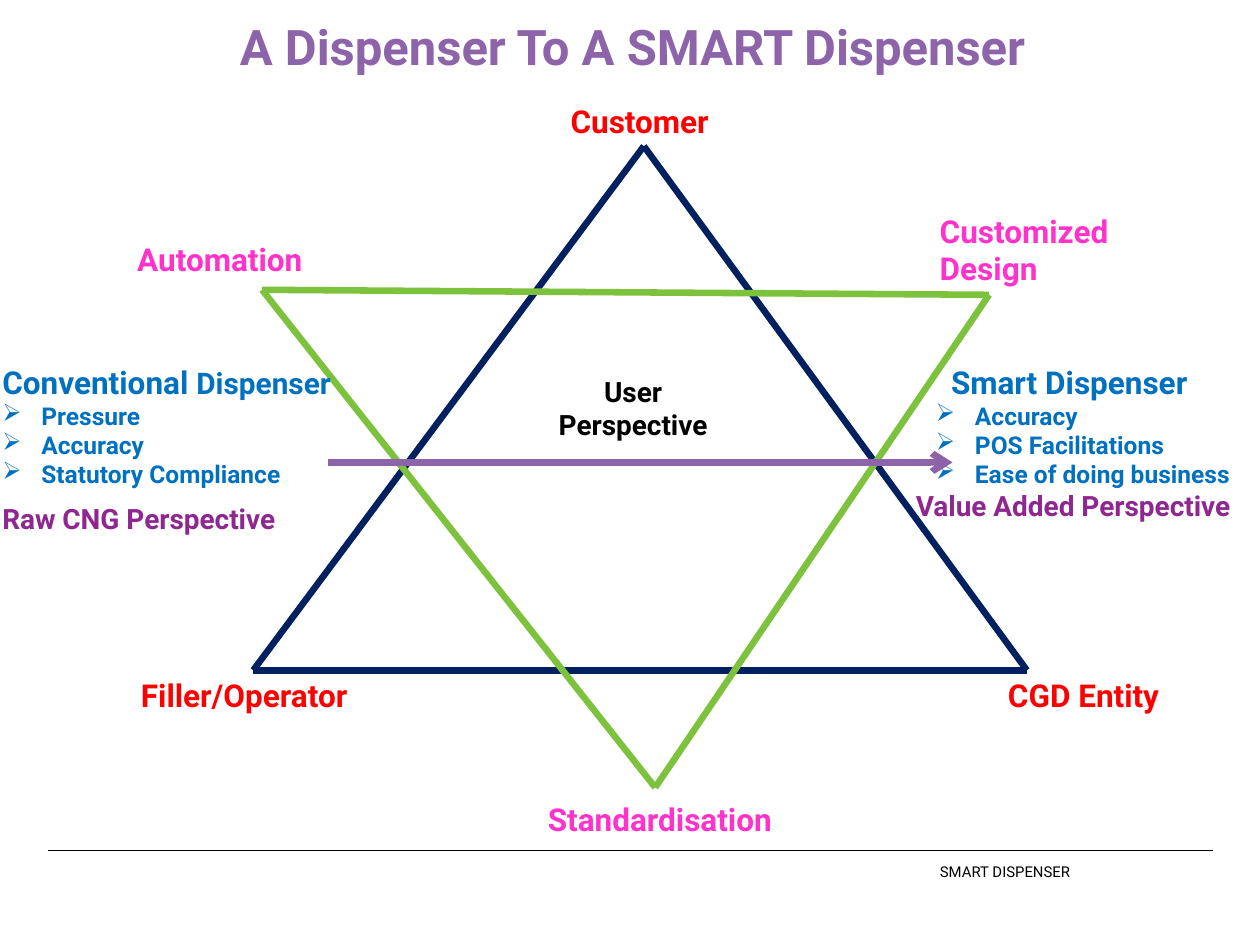
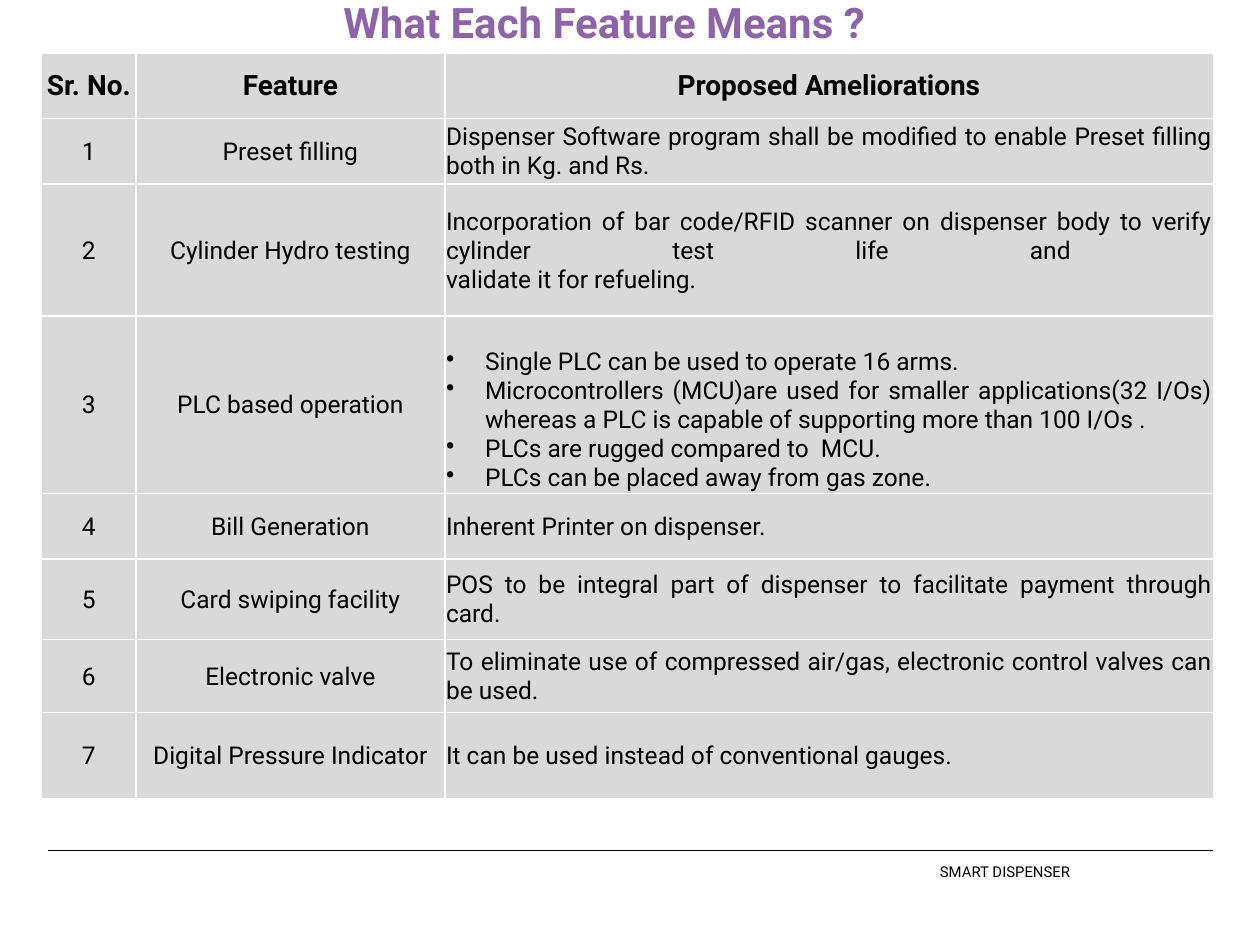
import copy

import pptx
import pptx.dml.color
import pptx.enum.shapes
import pptx.enum.text
import pptx.oxml
import pptx.oxml.ns
import pptx.util
from pptx.util import Inches

RGB = pptx.dml.color.RGBColor
PURPLE = RGB(0x8D, 0x64, 0xAA)
PLUM = RGB(0x8E, 0x27, 0x8F)
PINK = RGB(0xFF, 0x33, 0xCC)
RED = RGB(0xFF, 0x00, 0x00)
BLUE = RGB(0x00, 0x70, 0xC0)
NAVY = RGB(0x00, 0x20, 0x60)
GREEN = RGB(0x7D, 0xC2, 0x3D)
GREY = RGB(0xD9, 0xD9, 0xD9)
BLACK = RGB(0x00, 0x00, 0x00)
FONT = "Roboto"
ALIGN = pptx.enum.text.PP_ALIGN
LEFT, CENTER, JUSTIFY = ALIGN.LEFT, ALIGN.CENTER, ALIGN.JUSTIFY
HANGING = 0.31

# Content: star diagram
STAR_TITLE = "A Dispenser To A SMART Dispenser"
FOOTER = "SMART DISPENSER"
TRIANGLES = [
    (NAVY, [(5.11, 1.16), (2.01, 5.32), (8.15, 5.32)]),
    (GREEN, [(5.2, 6.25), (2.08, 2.3), (7.85, 2.34)]),
]
# lines of text, box, size, colour, alignment
LABELS = [
    (["Automation"], (0.99, 1.86, 1.62, 0.4), 18, PINK, LEFT),
    (["Customized", "Design"], (7.36, 1.63, 1.69, 0.71), 18, PINK, LEFT),
    (["Standardisation"], (4.25, 6.3, 2.12, 0.4), 18, PINK, LEFT),
    (["Customer"], (4.43, 0.76, 1.36, 0.4), 18, RED, LEFT),
    (["CGD Entity"], (7.83, 5.32, 1.54, 0.4), 18, RED, CENTER),
    (["Filler/Operator"], (1.02, 5.32, 1.98, 0.4), 18, RED, LEFT),
    (["User", "Perspective"], (4.29, 2.92, 1.47, 0.91), 16, BLACK, CENTER),
    (["Raw CNG Perspective"], (-0.08, 3.93, 2.54, 0.37), 16, PLUM, LEFT),
    (["Value Added Perspective"], (7.17, 3.83, 2.89, 0.37), 16, PLUM, LEFT),
]
# heading runs, heading indent, points, box, wrap
DISPENSERS = [
    ([("Smart Dispenser", 18)], 0.12,
     ["Accuracy", "POS Facilitations", "Ease of doing business"],
     (7.33, 2.83, 2.67, 1.11), False),
    ([("Conventional ", 18), ("Dispenser", 17)], 0,
     ["Pressure", "Accuracy", "Statutory Compliance"],
     (-0.08, 2.83, 3.08, 1.11), True),
]

# Content: feature table
TABLE_TITLE = "What Each Feature Means ?"
HEADERS = ["Sr. No.", "Feature", "Proposed Ameliorations"]
COLUMN_WIDTHS = [0.75, 2.45, 6.1]
HEADER_HEIGHT = 0.52
# feature, amelioration (a list is bulleted), row height
FEATURES = [
    ("Preset filling",
     "Dispenser Software program shall be modified to enable Preset filling "
     "both in Kg. and Rs.", 0.52),
    ("Cylinder Hydro testing",
     "Incorporation of bar code/RFID scanner on dispenser body to verify "
     "cylinder test life and \nvalidate it for refueling.", 1.05),
    ("PLC based operation",
     ["Single PLC can be used to operate 16 arms.",
      "Microcontrollers (MCU)are used for smaller applications(32 I/Os) "
      "whereas a PLC is capable of supporting more than 100 I/Os .",
      "PLCs are rugged compared to  MCU.",
      "PLCs can be placed away from gas zone."], 1.39),
    ("Bill Generation", "Inherent Printer on dispenser.", 0.52),
    ("Card swiping facility",
     "POS to be integral part of dispenser to facilitate payment through card.", 0.64),
    ("Electronic valve",
     "To eliminate use of compressed air/gas, electronic control valves can "
     "be used.", 0.58),
    ("Digital Pressure Indicator",
     "It can be used instead of conventional gauges.", 0.68),
]


def write(frame, text, size=14, colour=BLACK, bold=False, align=LEFT, bullet=None, indent=0):
    """Add one paragraph; text is a string or a list of (string, size) runs."""
    first = frame.paragraphs[0]
    paragraph = frame.add_paragraph() if first.runs else first
    paragraph.alignment = align
    properties = paragraph._p.get_or_add_pPr()
    if bullet:
        properties.set("marL", str(Inches(HANGING)))
        properties.set("indent", str(-Inches(HANGING)))
        properties.append(pptx.oxml.parse_xml(
            f'<a:buChar {pptx.oxml.ns.nsdecls("a")} char="{bullet}"/>'))
    elif indent:
        properties.set("marL", str(Inches(indent)))
    for words, run_size in [(text, size)] if isinstance(text, str) else text:
        for number, line in enumerate(words.split("\n")):
            if number:
                paragraph.add_line_break()
            run = paragraph.add_run()
            run.text = line
            run.font.name = FONT
            run.font.size = pptx.util.Pt(run_size)
            run.font.bold = bold
            run.font.color.rgb = colour
    for line_break in paragraph._p.findall(pptx.oxml.ns.qn("a:br")):
        line_break.append(copy.deepcopy(run._r.rPr))


def add_box(slide, box, wrap=True, inset=True, grow=True):
    frame = slide.shapes.add_textbox(*map(Inches, box)).text_frame
    frame.word_wrap = wrap
    if grow:
        frame.auto_size = pptx.enum.text.MSO_AUTO_SIZE.SHAPE_TO_FIT_TEXT
    if not inset:
        frame.margin_left = frame.margin_right = frame.margin_top = frame.margin_bottom = 0
    return frame


def add_line(slide, start, end, colour, width, arrow=False):
    line = slide.shapes.add_connector(
        pptx.enum.shapes.MSO_CONNECTOR.STRAIGHT, *map(Inches, (*start, *end)))
    line.line.color.rgb = colour
    line.line.width = pptx.util.Pt(width)
    namespace = pptx.oxml.ns.nsdecls("a")
    if arrow:
        line.line._get_or_add_ln().append(
            pptx.oxml.parse_xml(f'<a:tailEnd {namespace} type="arrow"/>'))
    line._element.spPr.append(pptx.oxml.parse_xml(f"<a:effectLst {namespace}/>"))


def add_slide(deck, title, title_box, title_size, **box_format):
    """Start a slide with the shared title style, rule and footer."""
    slide = deck.slides.add_slide(deck.slide_layouts[6])
    add_line(slide, (0.38, 6.75), (9.63, 6.75), BLACK, 0.25)
    write(add_box(slide, title_box, **box_format), title,
          size=title_size, colour=PURPLE, bold=True, align=CENTER)
    write(add_box(slide, (7.46, 6.85, 1.83, 0.14), inset=False), FOOTER, size=8.5)
    return slide


def fill_cell(cell, paragraphs, **text_format):
    cell.vertical_anchor = pptx.enum.text.MSO_ANCHOR.MIDDLE
    cell.margin_left = cell.margin_right = cell.margin_top = Inches(0.01)
    cell.margin_bottom = 0
    properties = cell._tc.get_or_add_tcPr()
    for side in "LRTB":
        properties.append(pptx.oxml.parse_xml(
            f'<a:ln{side} {pptx.oxml.ns.nsdecls("a")} w="12700"><a:solidFill>'
            f'<a:srgbClr val="FFFFFF"/></a:solidFill></a:ln{side}>'))
    cell.fill.solid()
    cell.fill.fore_color.rgb = GREY
    for paragraph in paragraphs:
        write(cell.text_frame, paragraph, **text_format)


def build_star(deck):
    slide = add_slide(deck, STAR_TITLE, (0.39, 0.13, 9.26, 0.6), 28, inset=False, grow=False)
    # Two overlapping triangles
    for colour, corners in TRIANGLES:
        for start, end in zip(corners, corners[1:] + corners[:1]):
            add_line(slide, start, end, colour, 3.75)
    # Labels at the corners, centre and sides
    for lines, box, size, colour, align in LABELS:
        frame = add_box(slide, box, wrap=False)
        for line in lines:
            write(frame, line, size=size, colour=colour, bold=True, align=align)
    # The two dispensers and the arrow between them
    for heading, indent, points, box, wrap in DISPENSERS:
        frame = add_box(slide, box, wrap=wrap)
        write(frame, heading, colour=BLUE, bold=True, indent=indent)
        for point in points:
            write(frame, point, colour=BLUE, bold=True, bullet="➢")
    add_line(slide, (2.6, 3.67), (7.56, 3.67), PURPLE, 3.75, arrow=True)


def build_features(deck):
    slide = add_slide(deck, TABLE_TITLE, (0.46, -0.08, 8.67, 0.5), 24)
    heights = [HEADER_HEIGHT] + [height for *_, height in FEATURES]
    features = slide.shapes.add_table(
        len(heights), len(HEADERS), Inches(0.33), Inches(0.42),
        Inches(sum(COLUMN_WIDTHS)), Inches(sum(heights))).table
    features.horz_banding = False
    for column, width in zip(features.columns, COLUMN_WIDTHS):
        column.width = Inches(width)
    for row, height in zip(features.rows, heights):
        row.height = Inches(height)
    for column, header in enumerate(HEADERS):
        fill_cell(features.cell(0, column), [header], size=16, bold=True, align=CENTER)
    for number, (feature, amelioration, _) in enumerate(FEATURES, 1):
        fill_cell(features.cell(number, 0), [str(number)], align=CENTER)
        fill_cell(features.cell(number, 1), [feature], align=CENTER)
        detail = features.cell(number, 2)
        if isinstance(amelioration, list):
            fill_cell(detail, amelioration, align=JUSTIFY, bullet="•")
            detail.margin_top = Inches(0.24)
        else:
            fill_cell(detail, [amelioration], align=JUSTIFY)


def main():
    deck = pptx.Presentation()
    deck.slide_width, deck.slide_height = Inches(10), Inches(7.5)
    build_star(deck)
    build_features(deck)
    deck.save("out.pptx")


if __name__ == "__main__":
    main()
